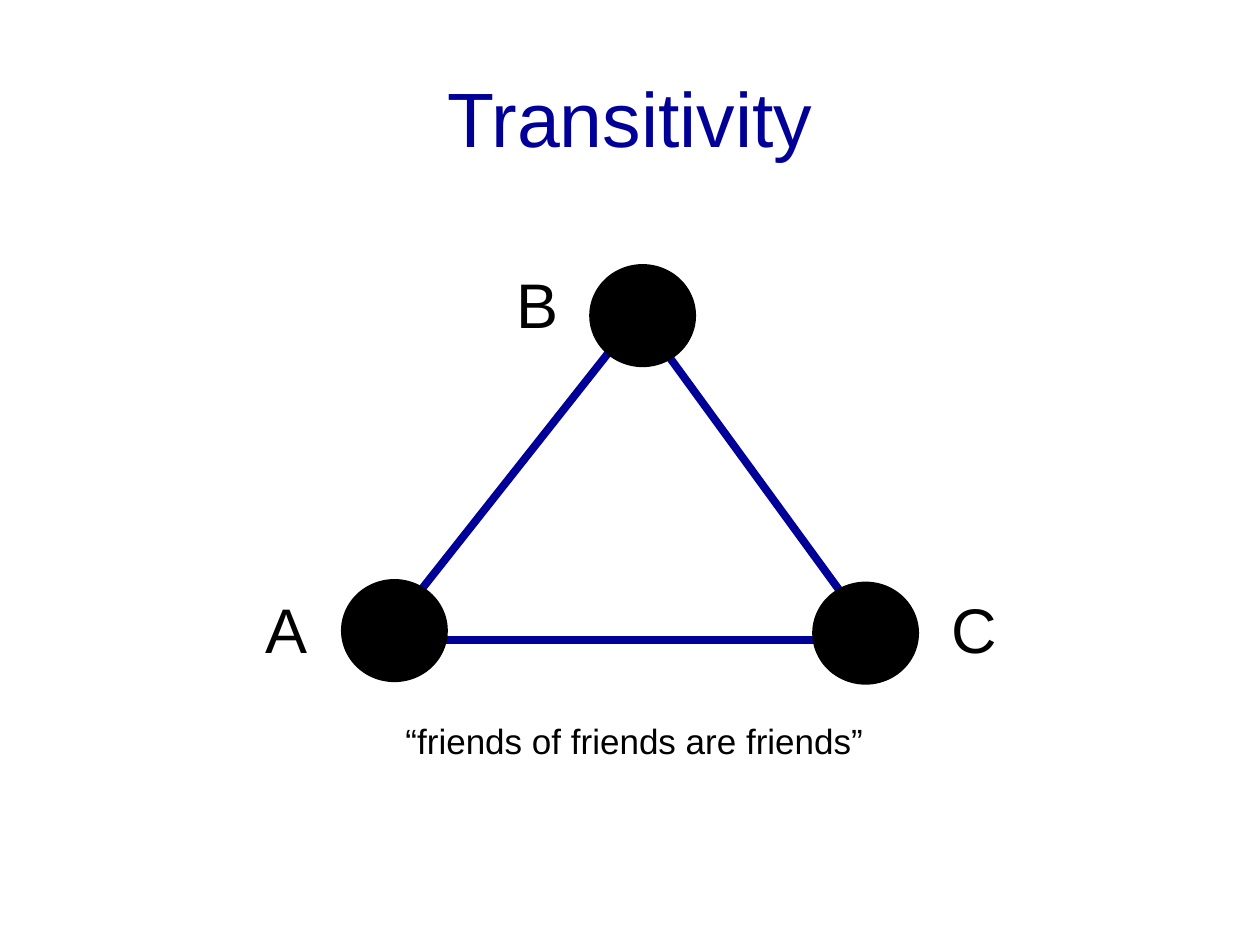
from pptx import Presentation
from pptx.dml.color import RGBColor
from pptx.enum.shapes import MSO_CONNECTOR as CONN, MSO_SHAPE as SHAPE
from pptx.enum.text import MSO_ANCHOR as ANCHOR, MSO_AUTO_SIZE as FIT, PP_ALIGN as ALIGN
from pptx.oxml.ns import qn
from pptx.util import Inches, Pt
from lxml import etree

COLORS = {"navy": "000099", "black": "000000", "white": "FFFFFF"}
FONT = "Arial"


def rgb(name):
    return RGBColor.from_string(COLORS[name])


def put_text(tf, text, size=36, color="black", align=ALIGN.LEFT, indent=0):
    p = tf.paragraphs[0]
    p.alignment = align
    if indent:
        p.level = 1
        pPr = p._p.get_or_add_pPr()
        pPr.set("marL", str(Inches(indent)))
        pPr.set("indent", "0")
    r = p.add_run()
    r.text = text
    r.font.name = FONT
    r.font.size = Pt(size)
    r.font.color.rgb = rgb(color)


class Deck:
    def __init__(self, width, height):
        self.prs = Presentation()
        self.prs.slide_width = Inches(width)
        self.prs.slide_height = Inches(height)
        self.s = self.prs.slides.add_slide(self.prs.slide_layouts[5])
        fill = self.s.background.fill
        fill.solid()
        fill.fore_color.rgb = rgb("white")

    def title(self, text, *box):
        sp = self.s.shapes.title
        sp.left, sp.top, sp.width, sp.height = map(Inches, box)
        sp.text_frame.vertical_anchor = ANCHOR.MIDDLE
        put_text(sp.text_frame, text, size=44, color="navy", align=ALIGN.CENTER)

    def tie(self, start, end):
        ends = map(Inches, (*start, *end))
        sp = self.s.shapes.add_connector(CONN.STRAIGHT, *ends)
        sp.line.color.rgb = rgb("navy")
        sp.line.width = Pt(4.5)
        etree.SubElement(sp._element.spPr, qn("a:effectLst"))

    def node(self, left, top, width=0.82, height=0.79):
        box = map(Inches, (left, top, width, height))
        sp = self.s.shapes.add_shape(SHAPE.OVAL, *box)
        sp.shadow.inherit = False
        sp.fill.solid()
        sp.fill.fore_color.rgb = rgb("black")
        sp.line.color.rgb = rgb("black")
        sp.line.width = Pt(2)

    def text(self, text, *box, wrap=False, **style):
        tf = self.s.shapes.add_textbox(*map(Inches, box)).text_frame
        tf.word_wrap = wrap
        tf.auto_size = FIT.SHAPE_TO_FIT_TEXT
        put_text(tf, text, **style)


def main():
    deck = Deck(10, 7.5)
    deck.title("Transitivity", 0.5, 0.3, 9, 1.25)

    ties = [
        ((3.13, 4.95), (5.09, 2.47)),
        ((5.12, 2.57), (6.95, 5.08)),
        ((3.15, 5.08), (6.87, 5.08)),
    ]
    for start, end in ties:
        deck.tie(start, end)

    for left, top in [(4.69, 2.11), (2.72, 4.61), (6.46, 4.63)]:
        deck.node(left, top)

    labels = [("A", 2.01, 4.64, 0.54), ("B", 4, 2.06, 0.54), ("C", 7.45, 4.64, 0.57)]
    for name, left, top, width in labels:
        deck.text(name, left, top, width, 0.71)

    deck.text("“friends of friends are friends”", 2.62, 5.66, 5, 0.44,
              wrap=True, size=20, indent=0.5)
    deck.prs.save("out.pptx")


if __name__ == "__main__":
    main()
